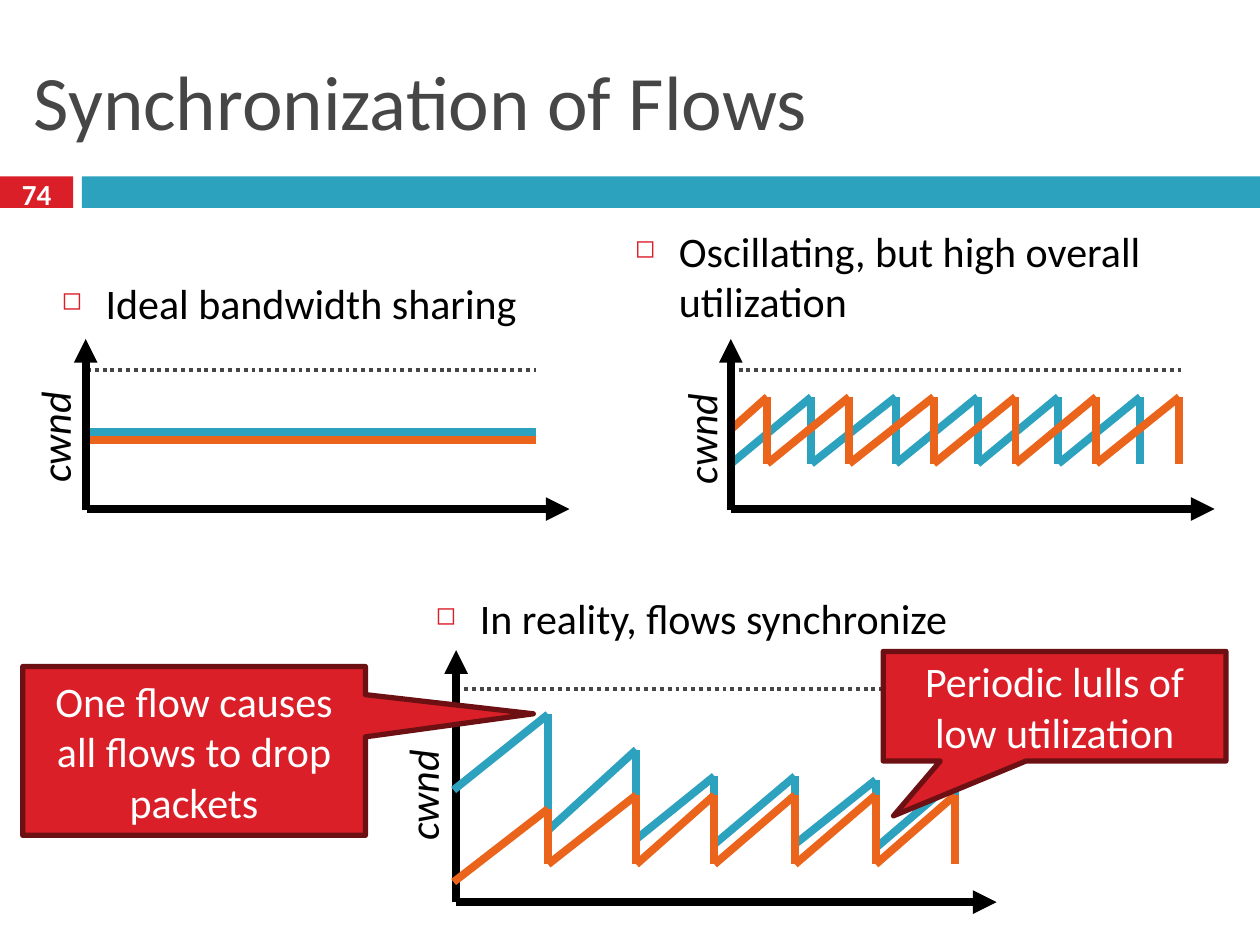
import pptx
import pptx.util
import pptx.dml.color
import pptx.enum.dml
import pptx.enum.shapes
import pptx.enum.text
import pptx.oxml.ns
from lxml import etree

Inches = pptx.util.Inches
Pt = pptx.util.Pt
qn = pptx.oxml.ns.qn
SHAPE = pptx.enum.shapes.MSO_SHAPE
ALIGN = pptx.enum.text.PP_ALIGN
ANCHOR = pptx.enum.text.MSO_ANCHOR

FONT = "Calibri"
HEX = {"red": "DA1F28", "edge": "6D1014", "blue": "2DA2BF", "orange": "EB641B",
       "gray": "464646", "black": "000000", "white": "FFFFFF"}


def rgb(name):
    return pptx.dml.color.RGBColor.from_string(HEX[name])


def write(shape, text, size, color, align=ALIGN.LEFT, anchor=ANCHOR.TOP,
          bold=False, italic=False, wrap=True):
    frame = shape.text_frame
    frame.word_wrap = wrap
    frame.vertical_anchor = anchor
    para = frame.paragraphs[0]
    para.alignment = align
    run = para.add_run()
    run.text = text
    font = run.font
    font.name, font.size, font.bold, font.italic = FONT, Pt(size), bold, italic
    font.color.rgb = rgb(color)
    return para


def add_text(parent, box, text, size, color, **style):
    shape = parent.add_textbox(*map(Inches, box))
    return shape, write(shape, text, size, color, **style)


def add_point(parent, box, text):
    """Paragraph with a small hollow square as its bullet."""
    para = add_text(parent, box, text, 24, "black")[1]
    para.space_before = Pt(7)
    props = para._p.get_or_add_pPr()
    props.set("marL", str(Inches(0.35)))
    props.set("indent", str(-Inches(0.35)))
    tint = etree.SubElement(props, qn("a:buClr"))
    etree.SubElement(tint, qn("a:srgbClr"), val=HEX["red"])
    etree.SubElement(props, qn("a:buSzPct"), val="60000")
    etree.SubElement(props, qn("a:buChar"), char="◻")


def add_block(parent, kind, box, fill, edge=None):
    shape = parent.add_shape(kind, *map(Inches, box))
    shape.shadow.inherit = False
    shape.fill.solid()
    shape.fill.fore_color.rgb = rgb(fill)
    if edge:
        shape.line.color.rgb = rgb(edge)
        shape.line.width = Pt(3)
    else:
        shape.line.fill.background()
    return shape


def add_note(parent, box, tip, text):
    shape = add_block(parent, SHAPE.RECTANGULAR_CALLOUT, box, "red", "edge")
    shape.adjustments[0], shape.adjustments[1] = tip
    write(shape, text, 24, "white", align=ALIGN.CENTER, anchor=ANCHOR.MIDDLE)


def add_line(parent, start, end, color, width=4.5, dots=False, arrow=False):
    line = parent.add_connector(pptx.enum.shapes.MSO_CONNECTOR.STRAIGHT,
                                *map(Inches, (*start, *end)))
    line.line.color.rgb = rgb(color)
    line.line.width = Pt(width)
    if dots:
        line.line.dash_style = pptx.enum.dml.MSO_LINE.ROUND_DOT
    if arrow:
        etree.SubElement(line.line._get_or_add_ln(), qn("a:tailEnd"),
                         type="triangle")
    etree.SubElement(line._element.spPr, qn("a:effectLst"))


def add_frame(parent, left, right, base, limit, end, label):
    """Axis label, time axis and dotted capacity limit."""
    box = add_text(parent, (*label, 0.99, 0.51), "cwnd", 24, "black",
                   italic=True, wrap=False)[0]
    box.rotation = 270
    add_line(parent, (left, base), (right, base), "black", arrow=True)
    add_line(parent, (left, limit), (end, limit), "gray", 2.25, dots=True)


def add_rise(parent, x, base, top):
    add_line(parent, (x, base), (x, top), "black", arrow=True)


def add_saw(parent, start, teeth, color):
    """Each tooth (x, top, low) is a ramp to its top and a drop to its low."""
    for x, top, low in teeth:
        add_line(parent, start, (x, top), color)
        add_line(parent, (x, top), (x, low), color)
        start = (x, low)


def main():
    deck = pptx.Presentation()
    deck.slide_width, deck.slide_height = Inches(10), Inches(7.5)
    shapes = deck.slides.add_slide(deck.slide_layouts[6]).shapes

    # Title and band
    add_block(shapes, SHAPE.RECTANGLE, (0, 1.4, 0.58, 0.25), "red")
    add_block(shapes, SHAPE.RECTANGLE, (0.65, 1.4, 9.35, 0.25), "blue")
    add_text(shapes, (0.17, 0.25, 9.67, 1.08), "Synchronization of Flows",
             44, "gray", anchor=ANCHOR.MIDDLE)
    add_text(shapes, (0, 1.37, 0.58, 0.33), "74", 16.6, "white",
             align=ALIGN.CENTER, anchor=ANCHOR.MIDDLE, bold=True)

    # Headings
    add_point(shapes, (0.39, 2.15, 4.16, 0.55), "Ideal bandwidth sharing")
    add_point(shapes, (4.94, 1.74, 4.91, 1.01),
              "Oscillating, but high overall utilization")
    add_point(shapes, (3.36, 4.65, 4.91, 0.51), "In reality, flows synchronize")

    # Ideal: two steady flows
    ideal = shapes.add_group_shape().shapes
    add_frame(ideal, 0.69, 4.52, 4.04, 2.94, 4.25, (-0.06, 3.18))
    for y, color in ((3.43, "blue"), (3.49, "orange")):
        add_line(ideal, (0.69, y), (4.25, y), color)
    add_rise(ideal, 0.68, 4.05, 2.69)

    # Oscillating: flows that drop in turn
    swing = shapes.add_group_shape().shapes
    add_frame(swing, 5.8, 9.64, 4.04, 2.94, 9.37, (5.07, 3.19))
    for start, color, peaks in (
            ((5.79, 3.69), "blue", (6.44, 7.11, 7.76, 8.4, 9.05)),
            ((5.81, 3.4), "orange", (6.09, 6.74, 7.41, 8.06, 8.7, 9.36))):
        add_saw(swing, start, [(x, 3.15, 3.68) for x in peaks], color)
    add_rise(swing, 5.8, 4.05, 2.69)

    # Reality: flows that drop together
    real = shapes.add_group_shape().shapes
    add_frame(real, 3.62, 7.91, 7.16, 5.47, 7.91, (2.86, 6.02))
    add_rise(real, 3.62, 7.16, 5.16)
    peaks = (4.35, 5.05, 5.67, 6.31, 6.95, 7.58)
    tops = (5.67, 5.95, 6.16, 6.16, 6.19, 6.19)
    lows = (6.59, 6.66, 6.7, 6.7, 6.73, 6.72)
    add_saw(real, (3.6, 6.27), zip(peaks, tops, lows), "blue")
    add_saw(real, (3.6, 7), [(peaks[0], 6.42, 6.86)]
            + [(x, 6.31, 6.86) for x in peaks[1:]], "orange")

    # Callouts
    add_note(shapes, (0.18, 5.29, 2.72, 1.34), (0.99, -0.22),
             "One flow causes all flows to drop packets")
    add_note(shapes, (7.01, 5.17, 2.72, 0.87), (-0.47, 1),
             "Periodic lulls of low utilization")

    deck.save("out.pptx")


if __name__ == "__main__":
    main()
